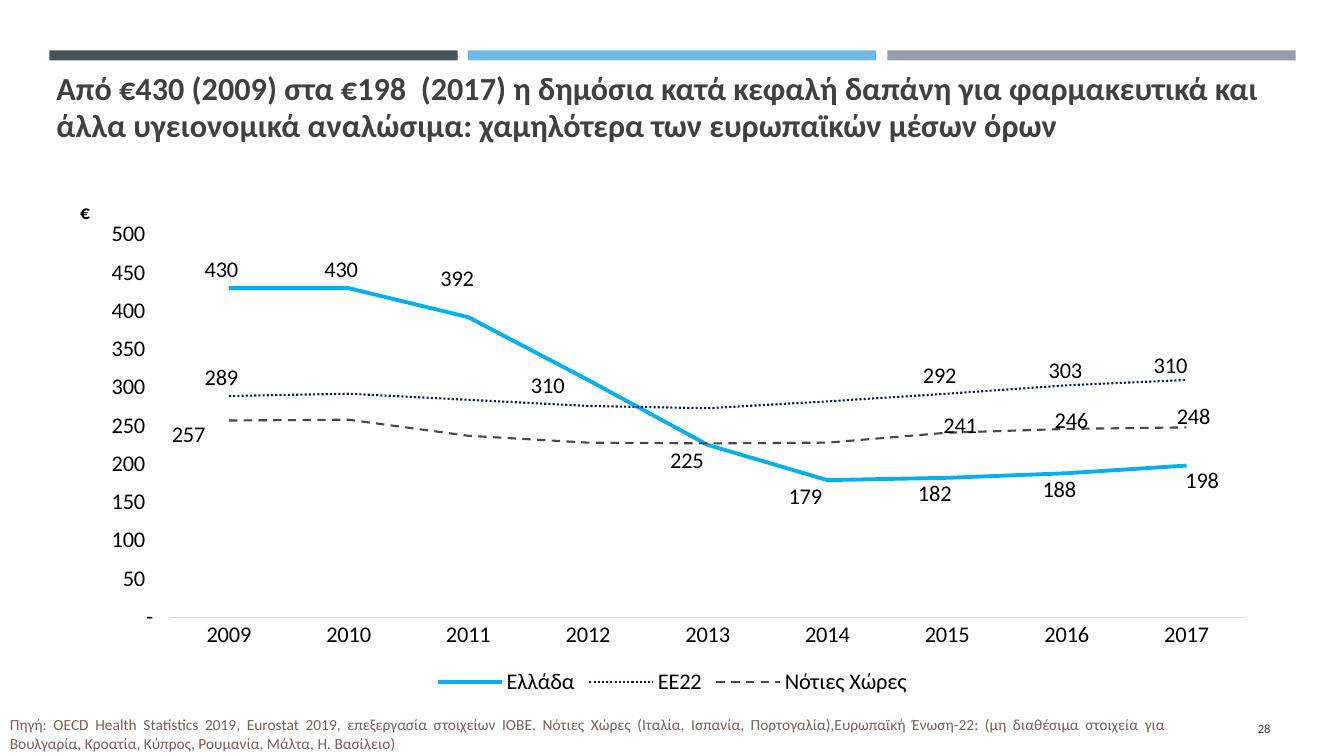
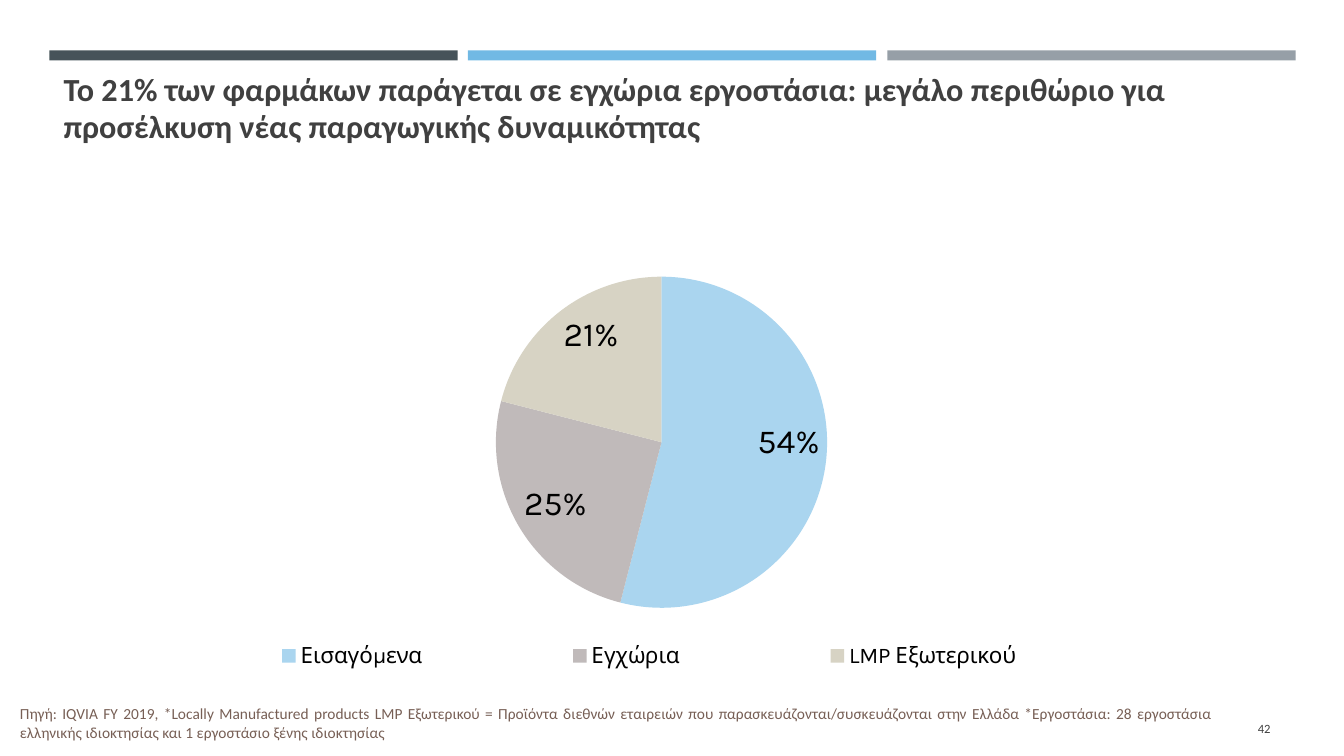
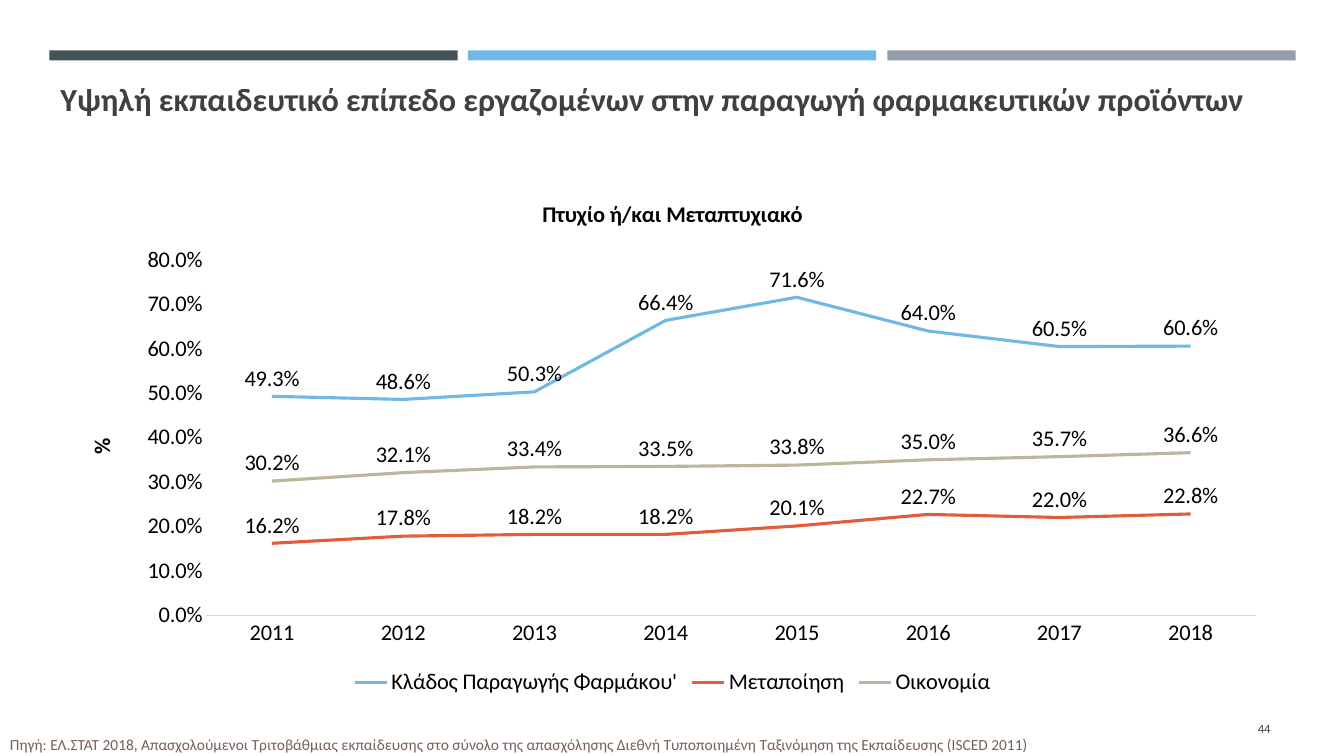
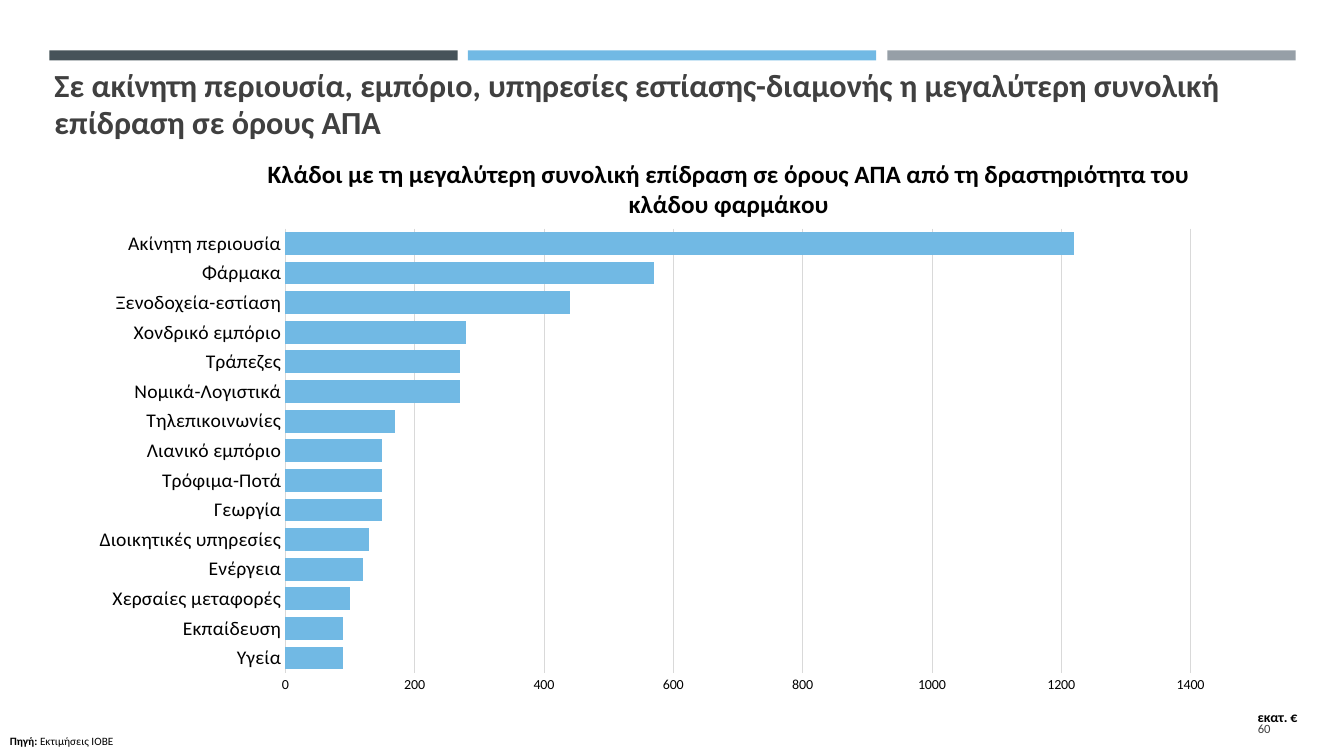
import lxml.etree
import pptx
import pptx.chart.data
import pptx.dml.color
import pptx.enum.chart
import pptx.enum.dml
import pptx.enum.shapes
import pptx.enum.text
import pptx.oxml.ns
import pptx.util

PX = 9144
FONT = "Calibri"
BLUE, GREY, BLACK, INK, BROWN = "71B9E4", "D9D9D9", "000000", "404040", "775F55"
BANDS = ["465359", BLUE, "969FA7"]
EURO = '_-* #,##0\\ _€_-;\\-* #,##0\\ _€_-;_-* "-"?'
KIND = pptx.enum.chart.XL_CHART_TYPE
SPOT = pptx.enum.chart.XL_LABEL_POSITION
SIDE = pptx.enum.chart.XL_LEGEND_POSITION
DASH = pptx.enum.dml.MSO_LINE
ALIGN = pptx.enum.text.PP_ALIGN
ANCHOR = pptx.enum.text.MSO_ANCHOR


def rgb(code):
    """Turn a hex string into a colour."""
    return pptx.dml.color.RGBColor.from_string(code)


def emu(box):
    """Turn px lengths into EMU."""
    return [n * PX for n in box]


def style(font, size, color=BLACK, bold=False, face=FONT):
    """Set the look of a font."""
    font.size = pptx.util.Pt(size)
    font.name = face
    font.bold = bold
    font.color.rgb = rgb(color)


def stroke(line, color, width, dash=None):
    """Set the look of a line."""
    line.color.rgb = rgb(color)
    line.width = pptx.util.Pt(width)
    if dash:
        line.dash_style = dash


def add_bands(deck, slide):
    """Put the three top bands on the slide master."""
    for i, color in enumerate(BANDS):
        box = emu([49 + i * 831 // 2, 50, 405, 10])
        band = slide.shapes.add_shape(pptx.enum.shapes.MSO_SHAPE.RECTANGLE, *box)
        band.shadow.inherit = False
        band.fill.solid()
        band.fill.fore_color.rgb = rgb(color)
        band.line.fill.background()
        band.name = f"Band {i + 1}"
        band.element.nvSpPr.cNvPr.set("id", str(101 + i))
        deck.slide_master.shapes.element.insert(2 + i, band.element)


def add_title(slide, text, box):
    """Fill and place the title."""
    title = slide.shapes.title
    title.left, title.top, title.width, title.height = emu(box)
    frame = title.text_frame
    frame.text = text
    frame.auto_size = pptx.enum.text.MSO_AUTO_SIZE.NONE
    frame.vertical_anchor = ANCHOR.BOTTOM
    para = frame.paragraphs[0]
    para.alignment = ALIGN.LEFT
    para.line_spacing = 0.97
    style(para.runs[0].font, 23, INK, True)


def add_text(slide, box, text, size, color, align=ALIGN.LEFT):
    """Add a text box and return its frame."""
    frame = slide.shapes.add_textbox(*emu(box)).text_frame
    frame.word_wrap = True
    frame.text = text
    para = frame.paragraphs[0]
    para.alignment = align
    style(para.runs[0].font, size, color)
    return frame


def add_number(slide, text):
    """Add the page number."""
    frame = add_text(slide, [1155, 703, 115, 40], text, 9, INK, ALIGN.RIGHT)
    frame.vertical_anchor = ANCHOR.MIDDLE


def add_source(slide, text, box):
    """Add the source line at the foot."""
    para = add_text(slide, box, text, 11, BROWN, ALIGN.JUSTIFY).paragraphs[0]
    para.line_spacing = 1.07
    para.space_after = pptx.util.Pt(8)


def place(node, index, x, y, w=None, h=None, mode="edge", inner=False):
    """Give a chart part a manual layout."""
    qn = pptx.oxml.ns.qn
    old = node.find(qn("c:layout"))
    if old is not None:
        node.remove(old)
    layout = lxml.etree.Element(qn("c:layout"))
    node.insert(index, layout)
    spot = lxml.etree.SubElement(layout, qn("c:manualLayout"))
    parts = [("layoutTarget", "inner" if inner else None), ("xMode", mode),
             ("yMode", mode), ("x", x), ("y", y), ("w", w), ("h", h)]
    for tag, value in parts:
        if value is not None:
            lxml.etree.SubElement(spot, qn("c:" + tag)).set("val", str(value))


def add_chart(slide, kind, box, cats, rows, size, fmt="General", face=FONT):
    """Add a chart with its font set."""
    data = pptx.chart.data.CategoryChartData(number_format=fmt)
    data.categories = cats
    for name, vals in rows:
        data.add_series(name, vals)
    chart = slide.shapes.add_chart(kind, *emu(box), data).chart
    style(chart.font, size, face=face)
    chart.has_title = False
    chart.has_legend = False
    return chart


def set_plot(chart, *box):
    """Fix the inner plot area."""
    place(chart.element.xpath(".//c:plotArea")[0], 0, *box, inner=True)


def set_head(chart, text, size):
    """Set the chart title."""
    chart.has_title = True
    frame = chart.chart_title.text_frame
    frame.text = text
    style(frame.paragraphs[0].runs[0].font, size, bold=True)


def set_legend(chart, side):
    """Show the legend."""
    chart.has_legend = True
    chart.legend.position = side
    chart.legend.include_in_layout = False


def set_axes(chart, unit, size, fmt, turn="0"):
    """Format both axes and name the value axis."""
    cat, val = chart.category_axis, chart.value_axis
    for axis in (cat, val):
        axis.major_tick_mark = pptx.enum.chart.XL_TICK_MARK.NONE
        axis.minor_tick_mark = pptx.enum.chart.XL_TICK_MARK.NONE
        axis.has_major_gridlines = False
    stroke(cat.format.line, GREY, 0.75)
    val.format.line.fill.background()
    val.minimum_scale = 0
    val.tick_labels.number_format = fmt
    val.tick_labels.number_format_is_linked = False
    frame = val.axis_title.text_frame
    frame.text = unit
    style(frame.paragraphs[0].runs[0].font, size, bold=True)
    node = chart.element.xpath(".//c:valAx/c:title")[0]
    node.xpath(".//a:bodyPr")[0].set("rot", turn)
    return node


def set_line(ser, color, width, dash=None):
    """Format a line series."""
    ser.smooth = False
    ser.marker.style = pptx.enum.chart.XL_MARKER_STYLE.NONE
    stroke(ser.format.line, color, width, dash)


def set_label(labels, fmt, spot):
    """Set the number format and place of data labels."""
    labels.number_format = fmt
    labels.number_format_is_linked = False
    labels.position = spot


def shift(chart, index, moves, box):
    """Show single labels of a series, moved by px."""
    ser = chart.plots[0].series[index]
    for i in moves:
        ser.points[i].data_label.position = SPOT.ABOVE
    node = chart.element.xpath(".//c:ser")[index]
    for lead in node.xpath(".//c:showLeaderLines"):
        lead.set("val", "0")
    for label in node.xpath(".//c:dLbl"):
        dx, dy = moves[int(label.xpath("./c:idx/@val")[0])]
        place(label, 1, round(dx / box[2], 3), round(dy / box[3], 3), mode=None)
        form = lxml.etree.Element(pptx.oxml.ns.qn("c:numFmt"))
        form.set("formatCode", EURO)
        form.set("sourceLinked", "0")
        label.insert(2, form)


def spend(slide):
    """Build the slide on spending per head."""
    add_title(slide, "Από €430 (2009) στα €198  (2017) η δημόσια κατά κεφαλή δαπάνη για φαρμακευτικά και άλλα υγειονομικά αναλώσιμα: χαμηλότερα των ευρωπαϊκών μέσων όρων", [46, 66, 1239, 83])
    add_number(slide, "28")
    add_source(slide, "Πηγή: OECD Health Statistics 2019, Eurostat 2019, επεξεργασία στοιχείων ΙΟΒΕ. Νότιες Χώρες (Ιταλία, Ισπανία, Πορτογαλία),Ευρωπαϊκή Ένωση-22: (μη διαθέσιμα στοιχεία για Βουλγαρία, Κροατία, Κύπρος, Ρουμανία, Μάλτα, Η. Βασίλειο)", [0, 703, 1167, 50])
    box = [64, 178, 1206, 517]
    rows = [("Ελλάδα", [430, 430, 392, 310, 225, 179, 182, 188, 198]),
            ("ΕΕ22", [289, 292, 284, 276, 273, 282, 292, 303, 310]),
            ("Νότιες Χώρες", [257, 258, 237, 228, 227, 228, 241, 246, 248])]
    looks = [("00B0F0", 2.75), ("002060", 1.5, DASH.ROUND_DOT), ("4C4545", 1.5, DASH.DASH)]
    moves = [{0: (0, 0), 1: (0, 0), 2: (-4, -20), 3: (-33, 24), 4: (-13, 34),
              5: (-15, 34), 6: (-5, 34), 7: (0, 34), 8: (23, 33)},
             {0: (0, 0), 6: (0, 0), 7: (6, 3), 8: (-9, 4)},
             {0: (-32, 32), 6: (20, 11), 7: (12, 10), 8: (14, 8)}]
    years = [str(y) for y in range(2009, 2018)]
    chart = add_chart(slide, KIND.LINE, box, years, rows, 16, EURO)
    chart.plots[0].vary_by_categories = False
    place(set_axes(chart, "€", 14, EURO), 1, 0.01, 0.03)
    chart.value_axis.maximum_scale = 500
    chart.value_axis.major_unit = 50
    set_legend(chart, SIDE.BOTTOM)
    set_plot(chart, 0.086, 0.106, 0.886, 0.734)
    for i, ser in enumerate(chart.plots[0].series):
        set_line(ser, *looks[i])
        ser.data_labels.show_value = False
        shift(chart, i, moves[i], box)


def share(slide):
    """Build the slide on home-made drugs."""
    add_title(slide, "Το 21% των φαρμάκων παράγεται σε εγχώρια εργοστάσια: μεγάλο περιθώριο για προσέλκυση νέας παραγωγικής δυναμικότητας", [53, 106, 1206, 44])
    rows = [("Series 1", [54, 25, 21])]
    cats = ["Εισαγόμενα", "Εγχώρια", "LMP Εξωτερικού"]
    chart = add_chart(slide, KIND.PIE, [29, 189, 1206, 486], cats, rows, 16, face="Karla")
    set_plot(chart, 0.327, 0.176, 0.386, 0.676)
    set_legend(chart, SIDE.TOP)
    place(chart.element.xpath(".//c:legend")[0], 1, 0.09, 0.91, 0.84, 0.08)
    ser = chart.plots[0].series[0]
    for i, color in enumerate(["AAD5EF", "C0BABA", "D7D3C4"]):
        fill = ser.points[i].format.fill
        fill.solid()
        fill.fore_color.rgb = rgb(color)
    labels = ser.data_labels
    labels.show_value = False
    labels.show_percentage = True
    set_label(labels, "0%", SPOT.INSIDE_END)
    style(labels.font, 24, face="Karla")
    add_number(slide, "42")
    add_source(slide, "Πηγή: IQVIA FY 2019, *Locally Manufactured products LMP Εξωτερικού = Προϊόντα διεθνών εταιρειών που παρασκευάζονται/συσκευάζονται στην Ελλάδα *Εργοστάσια: 28 εργοστάσια ελληνικής ιδιοκτησίας και 1 εργοστάσιο ξένης ιδιοκτησίας", [10, 692, 1203, 50])


def skill(slide):
    """Build the slide on staff degrees."""
    add_title(slide, "Υψηλή εκπαιδευτικό επίπεδο εργαζομένων στην παραγωγή φαρμακευτικών προϊόντων", [50, 66, 1245, 57])
    add_number(slide, "44")
    add_source(slide, "Πηγή: ΕΛ.ΣΤΑΤ 2018, Απασχολούμενοι Τριτοβάθμιας εκπαίδευσης στο σύνολο της απασχόλησης Διεθνή Τυποποιημένη Ταξινόμηση της Εκπαίδευσης (ISCED 2011)", [0, 723, 1086, 30])
    rows = [("Κλάδος Παραγωγής Φαρμάκου'", [0.493, 0.486, 0.503, 0.664, 0.716, 0.64, 0.605, 0.606]),
            ("Μεταποίηση", [0.162, 0.178, 0.182, 0.182, 0.201, 0.227, 0.22, 0.228]),
            ("Οικονομία", [0.302, 0.321, 0.334, 0.335, 0.338, 0.35, 0.357, 0.366])]
    years = [str(y) for y in range(2011, 2019)]
    chart = add_chart(slide, KIND.LINE, [64, 178, 1206, 517], years, rows, 16, "0.0%")
    chart.plots[0].vary_by_categories = False
    set_head(chart, "Πτυχίο ή/και Μεταπτυχιακό", 16)
    set_axes(chart, "%", 16, "0.0%", "-5400000")
    set_legend(chart, SIDE.BOTTOM)
    for ser, color in zip(chart.plots[0].series, [BLUE, "E25D3C", "BDB59D"]):
        set_line(ser, color, 2.25)
        ser.data_labels.show_value = True
        set_label(ser.data_labels, "0.0%", SPOT.ABOVE)


def effect(slide):
    """Build the slide on the effect by branch."""
    add_title(slide, "Σε ακίνητη περιουσία, εμπόριο, υπηρεσίες εστίασης-διαμονής η μεγαλύτερη συνολική επίδραση σε όρους ΑΠΑ", [44, 63, 1245, 83])
    cats = ["Υγεία", "Εκπαίδευση", "Χερσαίες μεταφορές", "Ενέργεια",
            "Διοικητικές υπηρεσίες", "Γεωργία", "Τρόφιμα-Ποτά", "Λιανικό εμπόριο",
            "Τηλεπικοινωνίες", "Νομικά-Λογιστικά", "Τράπεζες", "Χονδρικό εμπόριο",
            "Ξενοδοχεία-εστίαση", "Φάρμακα", "Ακίνητη περιουσία"]
    vals = [90, 90, 100, 120, 130, 150, 150, 150, 170, 270, 270, 280, 440, 570, 1220]
    chart = add_chart(slide, KIND.BAR_CLUSTERED, [64, 145, 1230, 579], cats, [("Series 1", vals)], 10)
    set_head(chart, "Κλάδοι με τη μεγαλύτερη συνολική επίδραση σε όρους ΑΠΑ από τη δραστηριότητα του κλάδου φαρμάκου", 18)
    place(chart.element.xpath("./c:chart/c:title")[0], 1, 0.16, 0.01)
    place(set_axes(chart, "εκατ. €", 10, "0"), 1, 0.96, 0.97)
    style(chart.category_axis.tick_labels.font, 14)
    axis = chart.value_axis
    axis.maximum_scale = 1400
    axis.major_unit = 200
    axis.has_major_gridlines = True
    stroke(axis.major_gridlines.format.line, GREY, 0.25, DASH.ROUND_DOT)
    set_plot(chart, 0.178, 0.143, 0.73, 0.77)
    plot = chart.plots[0]
    plot.vary_by_categories = False
    plot.gap_width = 30
    fill = plot.series[0].format.fill
    fill.solid()
    fill.fore_color.rgb = rgb(BLUE)
    add_number(slide, "60")
    para = add_text(slide, [0, 724, 228, 24], "Πηγή:", 8, BLACK).paragraphs[0]
    para.runs[0].font.bold = True
    run = para.add_run()
    run.text = " Εκτιμήσεις ΙΟΒΕ"
    style(run.font, 8)


def main():
    """Build and save the deck."""
    deck = pptx.Presentation()
    deck.slide_width, deck.slide_height = emu([1333, 750])
    for i, build in enumerate([spend, share, skill, effect]):
        slide = deck.slides.add_slide(deck.slide_layouts[5])
        if i == 0:
            add_bands(deck, slide)
        build(slide)
    deck.save("out.pptx")


if __name__ == "__main__":
    main()
